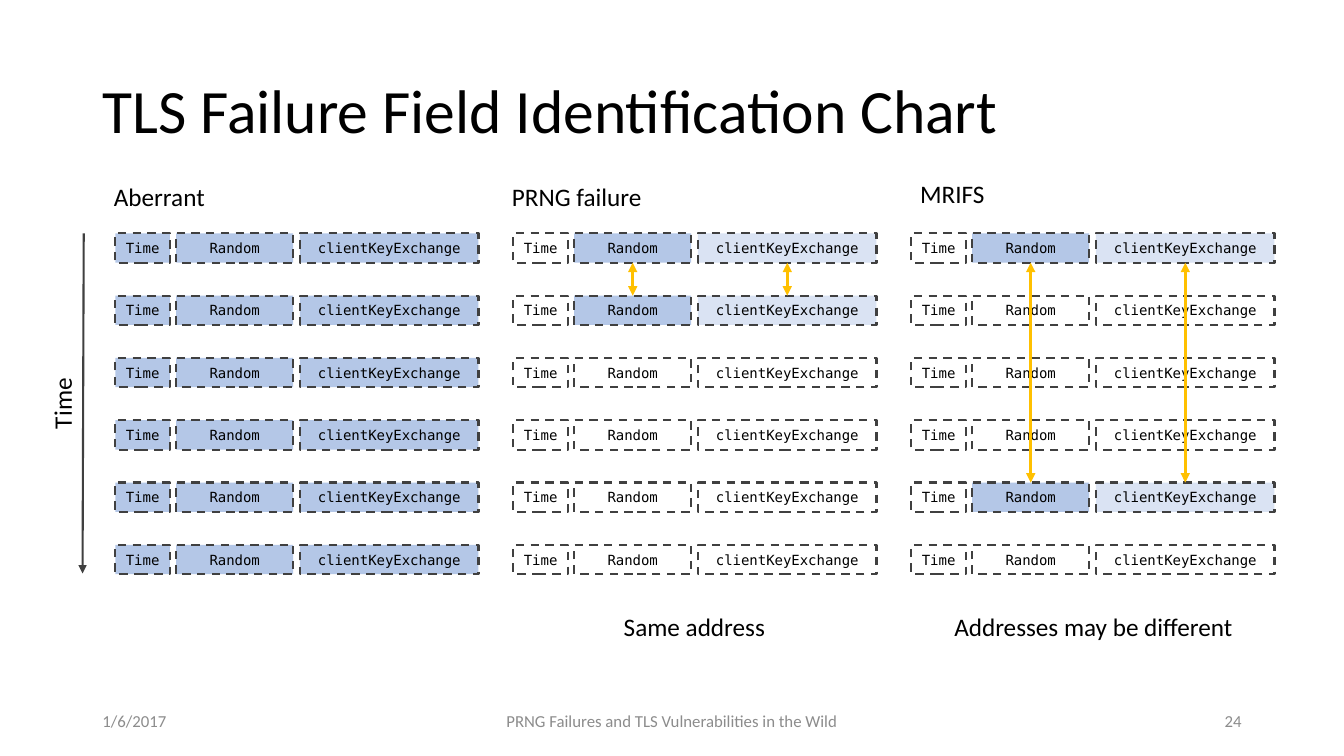
from dataclasses import dataclass

from pptx import Presentation
from pptx.dml.color import RGBColor
from pptx.enum.dml import MSO_LINE
from pptx.enum.shapes import MSO_CONNECTOR, MSO_SHAPE
from pptx.enum.text import MSO_ANCHOR, PP_ALIGN
from pptx.oxml.ns import qn
from pptx.shapes.autoshape import Shape
from pptx.shapes.connector import Connector
from pptx.slide import Slide
from pptx.util import Cm, Pt
from lxml.etree import SubElement

BLACK = RGBColor(0x00, 0x00, 0x00)
GRAY = RGBColor(0x8C, 0x8C, 0x8C)
DARK = RGBColor(0x40, 0x40, 0x40)
BLUE = RGBColor(0xB4, 0xC7, 0xE7)
PALE = RGBColor(0xDA, 0xE3, 0xF3)
GOLD = RGBColor(0xFF, 0xC0, 0x00)

# Grid of handshake records, in cm
ROWS = 6
TOP, ROW_PITCH, BOX_HEIGHT = 5.88, 1.57, 0.74
LEFT, COLUMN_PITCH = 2.91, 10.03


@dataclass(frozen=True)
class Field:
    name: str
    offset: float
    width: float


@dataclass(frozen=True)
class Scenario:
    fills: tuple[RGBColor | None, ...]  # one per field
    marked_rows: tuple[int, ...]
    linked: bool = True


@dataclass(frozen=True)
class Label:
    text: str
    left: float
    top: float
    width: float
    height: float = 1.02
    size: int = 18
    color: RGBColor = BLACK
    align: PP_ALIGN = PP_ALIGN.LEFT
    wrap: bool = False
    anchor: MSO_ANCHOR = MSO_ANCHOR.TOP
    spacing: float = 1.0
    rotation: int = 0


FIELDS = (
    Field("Time", 0, 1.37),
    Field("Random", 1.53, 2.95),
    Field("clientKeyExchange", 4.65, 4.5),
)
SCENARIOS = (
    Scenario((BLUE, BLUE, BLUE), tuple(range(ROWS)), linked=False),
    Scenario((None, BLUE, PALE), (0, 1)),
    Scenario((None, BLUE, PALE), (0, 4)),
)
FOOTER = {"top": 17.65, "size": 12, "color": GRAY, "wrap": True,
          "anchor": MSO_ANCHOR.MIDDLE}
LABELS = (
    Label("TLS Failure Field Identification Chart", 2.33, 1.02, 29.21, 3.68,
          size=44, wrap=True, anchor=MSO_ANCHOR.MIDDLE, spacing=0.9),
    Label("1/6/2017", left=2.33, width=7.62, **FOOTER),
    Label("PRNG Failures and TLS Vulnerabilities in the Wild", left=11.22,
          width=11.43, align=PP_ALIGN.CENTER, **FOOTER),
    Label("24", left=23.92, width=7.62, align=PP_ALIGN.RIGHT, **FOOTER),
    Label("Aberrant", 2.62, 4.45, 2.82),
    Label("PRNG failure", 12.65, 4.45, 3.81),
    Label("MRIFS", 22.94, 4.37, 2.16),
    Label("Same address", 15.47, 15.29, 4.11),
    Label("Addresses may be different", 23.8, 15.29, 7.62),
    Label("Time", 0.66, 9.65, 1.8, rotation=270),
)


def put_text(sp: Shape, text: str, *, size: int, font: str = "Calibri",
             color: RGBColor = BLACK, align: PP_ALIGN = PP_ALIGN.LEFT,
             anchor: MSO_ANCHOR = MSO_ANCHOR.TOP, wrap: bool = False,
             spacing: float = 1.0) -> None:
    tf = sp.text_frame
    tf.word_wrap = wrap
    tf.vertical_anchor = anchor
    p = tf.paragraphs[0]
    p.alignment = align
    p.line_spacing = spacing
    r = p.add_run()
    r.text = text
    r.font.name = font
    r.font.size = Pt(size)
    r.font.color.rgb = color


def add_label(s: Slide, label: Label) -> None:
    sp = s.shapes.add_textbox(Cm(label.left), Cm(label.top),
                              Cm(label.width), Cm(label.height))
    sp.rotation = label.rotation
    put_text(sp, label.text, size=label.size, color=label.color,
             align=label.align, anchor=label.anchor, wrap=label.wrap,
             spacing=label.spacing)


def add_record(s: Slide, left: float, top: float,
               fills: tuple[RGBColor | None, ...]) -> list[Shape]:
    """Draw one row of fields as a group and return its boxes."""
    group = s.shapes.add_group_shape()
    boxes = []
    for field, fill in zip(FIELDS, fills):
        sp = group.shapes.add_shape(MSO_SHAPE.RECTANGLE,
                                    Cm(left + field.offset), Cm(top),
                                    Cm(field.width), Cm(BOX_HEIGHT))
        sp.shadow.inherit = False
        if fill is None:
            sp.fill.background()
        else:
            sp.fill.solid()
            sp.fill.fore_color.rgb = fill
        sp.line.color.rgb = DARK
        sp.line.width = Pt(1.5)
        sp.line.dash_style = MSO_LINE.DASH
        put_text(sp, field.name, size=10, font="DejaVu Sans Mono",
                 align=PP_ALIGN.CENTER, anchor=MSO_ANCHOR.MIDDLE)
        boxes.append(sp)
    return boxes


def add_arrow(s: Slide, x1: float, y1: float, x2: float, y2: float, *,
              color: RGBColor, width: float, ends: tuple[str, ...]) -> Connector:
    line = s.shapes.add_connector(MSO_CONNECTOR.STRAIGHT,
                                  Cm(x1), Cm(y1), Cm(x2), Cm(y2))
    line.line.color.rgb = color
    line.line.width = Pt(width)
    ln = line.line._get_or_add_ln()
    for end in ends:
        SubElement(ln, qn(f"a:{end}"), type="triangle")
    SubElement(line._element.spPr, qn("a:effectLst"))
    return line


def main() -> None:
    prs = Presentation()
    prs.slide_width, prs.slide_height = Cm(33.87), Cm(19.05)
    s = prs.slides.add_slide(prs.slide_layouts[6])

    # Title, headings, captions and footer
    for label in LABELS:
        add_label(s, label)

    # Records of each scenario over time
    blank = (None,) * len(FIELDS)
    pairs = []
    for column, scenario in enumerate(SCENARIOS):
        records = [
            add_record(s, LEFT + column * COLUMN_PITCH, TOP + row * ROW_PITCH,
                       scenario.fills if row in scenario.marked_rows else blank)
            for row in range(ROWS)
        ]
        if scenario.linked:
            first, last = (records[row] for row in scenario.marked_rows)
            pairs += list(zip(first, last))[1:]

    # Arrows between repeated values
    for upper, lower in pairs:
        link = add_arrow(s, 0, 0, 0, 0, color=GOLD, width=2.25,
                         ends=("headEnd", "tailEnd"))
        link.begin_connect(upper, 2)
        link.end_connect(lower, 0)

    # Time axis
    add_arrow(s, 2.11, TOP, 2.08, 14.45, color=DARK, width=1.5,
              ends=("tailEnd",))

    prs.save("out.pptx")


if __name__ == "__main__":
    main()
